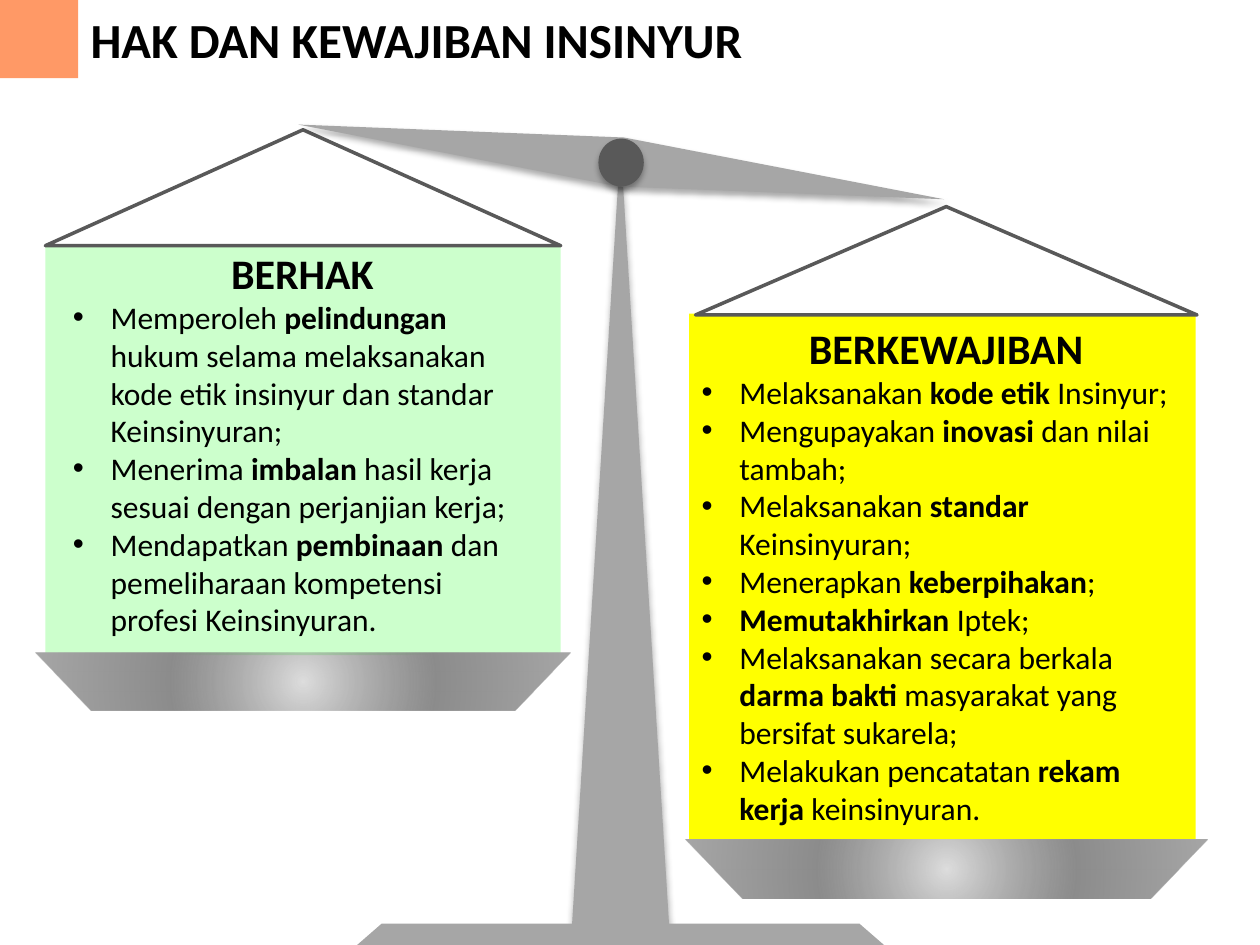
from lxml.etree import SubElement
from pptx import Presentation
from pptx.dml.color import RGBColor
from pptx.enum.shapes import MSO_SHAPE
from pptx.enum.text import MSO_ANCHOR, MSO_AUTO_SIZE, PP_ALIGN
from pptx.oxml import parse_xml
from pptx.oxml.ns import nsdecls, qn
from pptx.util import Inches, Pt

# Content: each bullet is a list of (words, bold) spans
TITLE = "HAK DAN KEWAJIBAN INSINYUR"
RIGHTS = ("BERHAK", [
    [("Memperoleh ", False), ("pelindungan", True),
     (" hukum selama melaksanakan kode etik insinyur dan standar Keinsinyuran;", False)],
    [("Menerima ", False), ("imbalan", True),
     (" hasil kerja sesuai dengan perjanjian kerja;", False)],
    [("Mendapatkan ", False), ("pembinaan", True),
     (" dan pemeliharaan kompetensi profesi Keinsinyuran.", False)],
])
DUTIES = ("BERKEWAJIBAN", [
    [("Melaksanakan ", False), ("kode etik ", True), ("Insinyur;", False)],
    [("Mengupayakan ", False), ("inovasi", True), (" dan nilai tambah;", False)],
    [("Melaksanakan ", False), ("standar ", True), ("Keinsinyuran;", False)],
    [("Menerapkan ", False), ("keberpihakan", True), (";", False)],
    [("Memutakhirkan ", True), ("Iptek;", False)],
    [("Melaksanakan secara berkala ", False), ("darma bakti ", True),
     ("masyarakat yang bersifat sukarela;", False)],
    [("Melakukan pencatatan ", False), ("rekam kerja ", True), ("keinsinyuran.", False)],
])

# Places are left, top, width, height in inches
SIDES = [
    dict(content=DUTIES, color="FFFF00", panel=(5.47, 2.49, 4.02, 4.17),
         words=(5.47, 2.49, 4.02, 4.14), right_inset=0.04,
         pan=(5.44, 6.66, 4.14, 0.47), strings=(5.52, 1.64, 3.98, 0.86)),
    dict(content=RIGHTS, color="CCFFCC", panel=(0.36, 1.95, 4.09, 3.25),
         words=(0.48, 1.95, 3.84, 3.13), right_inset=0.1,
         pan=(0.28, 5.18, 4.25, 0.46), strings=(0.36, 1.03, 4.09, 0.92)),
]
GREY, DARK, BLACK = "A6A6A6", "595959", "000000"
PAN_GRADIENT = (
    f'<a:gradFill {nsdecls("a")} rotWithShape="1"><a:gsLst>'
    '<a:gs pos="0"><a:srgbClr val="626262"><a:alpha val="21000"/></a:srgbClr></a:gs>'
    '<a:gs pos="50000"><a:srgbClr val="8C8C8C"/></a:gs>'
    '<a:gs pos="100000"><a:srgbClr val="A6A6A6"/></a:gs></a:gsLst>'
    '<a:path path="circle"><a:fillToRect l="50000" t="50000" r="50000" b="50000"/></a:path>'
    '</a:gradFill>')


def rgb(color):
    return RGBColor.from_string(color)


def add_shape(page, kind, place, fill=None, line=None, shadow=False):
    shape = page.shapes.add_shape(kind, *map(Inches, place))
    shape.shadow.inherit = False
    if fill:
        shape.fill.solid()
        shape.fill.fore_color.rgb = rgb(fill)
    else:
        shape.fill.background()
    if line:
        shape.line.color.rgb = rgb(line)
        shape.line.width = Pt(2)
    else:
        shape.line.fill.background()
    if shadow:
        effects = shape._element.spPr.find(qn("a:effectLst"))
        outer = SubElement(effects, qn("a:outerShdw"), blurRad=str(Pt(3.5)),
                           dist=str(Pt(2.2)), dir="5400000", rotWithShape="0")
        shade = SubElement(outer, qn("a:srgbClr"), val=BLACK)
        SubElement(shade, qn("a:alpha"), val="32000")
    return shape


def add_box(page, place):
    box = page.shapes.add_textbox(*map(Inches, place))
    box.text_frame.word_wrap = True
    box.text_frame.auto_size = MSO_AUTO_SIZE.SHAPE_TO_FIT_TEXT
    return box.text_frame


def add_span(para, words, size, bold):
    span = para.add_run()
    span.text = words
    span.font.name = "Calibri"
    span.font.size = Pt(size)
    span.font.bold = bold
    span.font.color.rgb = rgb(BLACK)


def add_bullet(para):
    props = para._p.get_or_add_pPr()
    props.set("marL", str(Inches(0.3)))
    props.set("indent", str(Inches(-0.3)))
    SubElement(props, qn("a:buFont"), typeface="Arial")
    SubElement(props, qn("a:buChar"), char="•")


def add_list(page, side):
    heading, bullets = side["content"]
    frame = add_box(page, side["words"])
    frame.vertical_anchor = MSO_ANCHOR.MIDDLE
    frame.margin_right = Inches(side["right_inset"])
    frame.paragraphs[0].alignment = PP_ALIGN.CENTER
    add_span(frame.paragraphs[0], heading, 24, True)
    for spans in bullets:
        para = frame.add_paragraph()
        add_bullet(para)
        for words, bold in spans:
            add_span(para, words, 18, bold)


def add_pan(page, place):
    pan = add_shape(page, MSO_SHAPE.TRAPEZOID, place, GREY)
    pan.adjustments[0] = 0.965
    pan.rotation = 180
    solid = pan._element.spPr.find(qn("a:solidFill"))
    solid.getparent().replace(solid, parse_xml(PAN_GRADIENT))


def main():
    deck = Presentation()
    deck.slide_width, deck.slide_height = Inches(10), Inches(7.5)
    page = deck.slides.add_slide(deck.slide_layouts[6])

    # Title with its corner square
    add_span(add_box(page, (0.62, 0.03, 6.85, 0.57)).paragraphs[0], TITLE, 28, True)
    add_shape(page, MSO_SHAPE.RECTANGLE, (0, 0, 0.62, 0.62), "FF9966")

    # Pillar
    add_shape(page, MSO_SHAPE.ISOSCELES_TRIANGLE, (4.53, 1.15, 0.79, 6.35), GREY, shadow=True)

    # Two loads, each hanging on strings over a pan
    for side in SIDES:
        add_shape(page, MSO_SHAPE.RECTANGLE, side["panel"], side["color"])
        add_list(page, side)
        add_pan(page, side["pan"])
        add_shape(page, MSO_SHAPE.ISOSCELES_TRIANGLE, side["strings"], line=DARK)

    # Tilted beam, pivot and foot
    beam = add_shape(page, MSO_SHAPE.DIAMOND, (2.35, 1.09, 5.16, 0.39), GREY, shadow=True)
    beam.rotation = 6.6
    add_shape(page, MSO_SHAPE.OVAL, (4.75, 1.1, 0.36, 0.38), DARK, shadow=True)
    foot = add_shape(page, MSO_SHAPE.TRAPEZOID, (2.8, 7.33, 4.25, 0.2), GREY)
    foot.adjustments[0] = 1.15

    deck.save("out.pptx")


if __name__ == "__main__":
    main()
